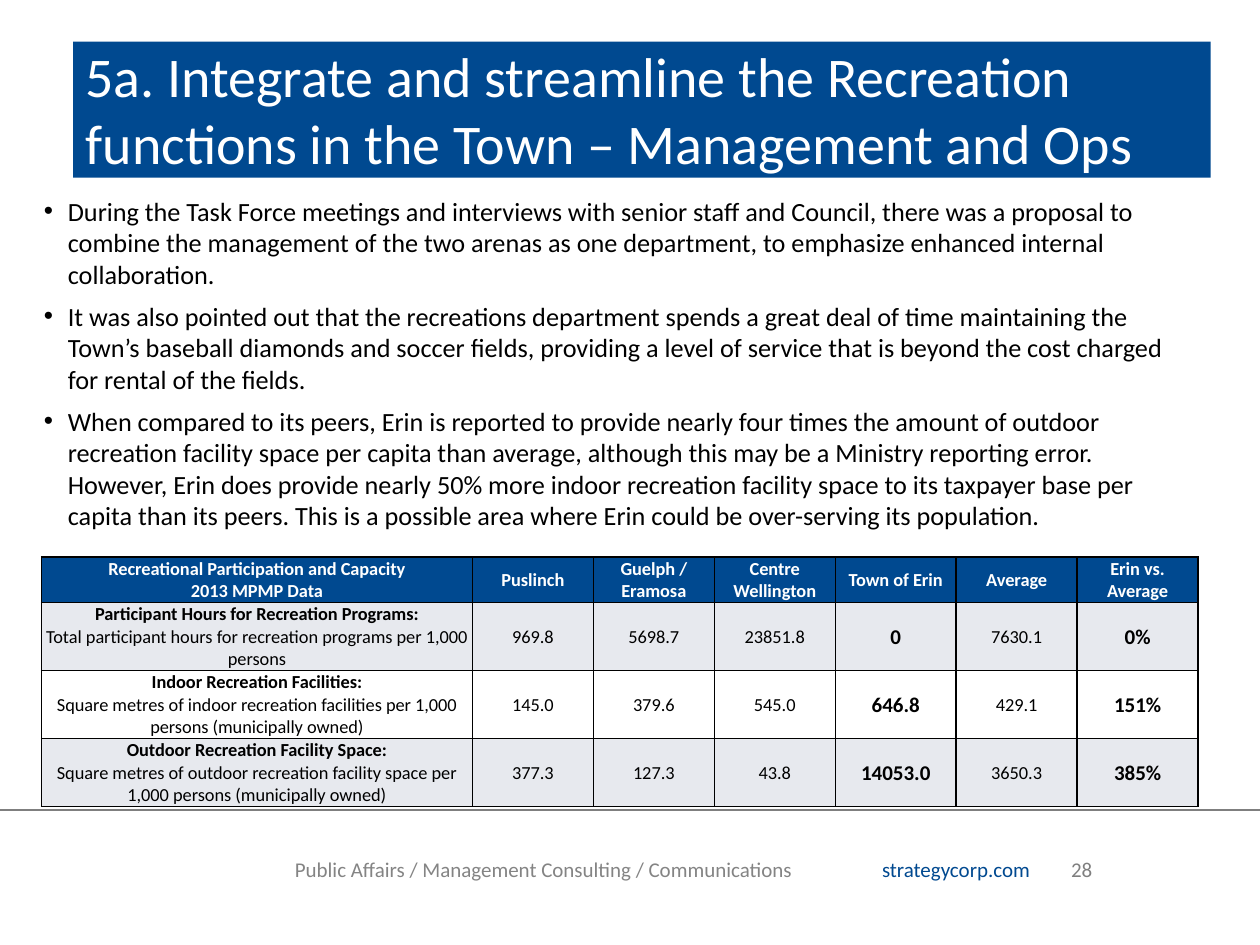
from lxml import etree
from pptx import Presentation
from pptx import util as u
from pptx.dml.color import RGBColor
from pptx.enum import shapes, text
from pptx.oxml import ns

BLUE = RGBColor(0x00, 0x49, 0x90)
WHITE = RGBColor(0xFF, 0xFF, 0xFF)
BLACK = RGBColor(0x00, 0x00, 0x00)
BAND = RGBColor(0xE7, 0xE9, 0xEE)
GREY = RGBColor(0x7F, 0x7F, 0x7F)
FOOTER_GREY = RGBColor(0x84, 0x84, 0x84)

TITLE = "5a. Integrate and streamline the Recreation functions in the Town – Management and Ops"
BULLETS = [
    "During the Task Force meetings and interviews with senior staff and Council, there was a "
    "proposal to combine the management of the two arenas as one department, to emphasize "
    "enhanced internal collaboration.",
    "It was also pointed out that the recreations department spends a great deal of time "
    "maintaining the Town’s baseball diamonds and soccer fields, providing a level of service "
    "that is beyond the cost charged for rental of the fields.",
    "When compared to its peers, Erin is reported to provide nearly four times the amount of "
    "outdoor recreation facility space per capita than average, although this may be a Ministry "
    "reporting error. However, Erin does provide nearly 50% more indoor recreation facility "
    "space to its taxpayer base per capita than its peers. This is a possible area where Erin "
    "could be over-serving its population.",
]
# A line break inside a cell starts a new paragraph
TABLE_ROWS = [
    ["Recreational Participation and Capacity\n2013 MPMP Data", "Puslinch", "Guelph / Eramosa",
     "Centre Wellington", "Town of Erin", "Average", "Erin vs. Average"],
    ["Participant Hours for Recreation Programs:\n"
     "Total participant hours for recreation programs per 1,000 persons",
     "969.8", "5698.7", "23851.8", "0", "7630.1", "0%"],
    ["Indoor Recreation Facilities:\n"
     "Square metres of indoor recreation facilities per 1,000 persons (municipally owned)",
     "145.0", "379.6", "545.0", "646.8", "429.1", "151%"],
    ["Outdoor Recreation Facility Space:\n"
     "Square metres of outdoor recreation facility space per 1,000 persons (municipally owned)",
     "377.3", "127.3", "43.8", "14053.0", "3650.3", "385%"],
]
COLUMN_WIDTHS = [3.42] + [0.96] * 6
ROW_HEIGHTS = [0.36] + [0.54] * 3
ERIN_COLUMNS = (4, 6)


class SlideBuilder:
    font_name = "Calibri"

    def __init__(self, slide):
        self.slide = slide

    def style(self, target, size, color, bold=False):
        font = target.font
        font.name, font.size, font.bold = self.font_name, u.Pt(size), bold
        font.color.rgb = color

    def indent(self, paragraph, left, first=0.0):
        properties = paragraph._p.get_or_add_pPr()
        properties.set("marL", str(u.Inches(left)))
        properties.set("indent", str(u.Inches(first)))
        return properties

    def clear_margins(self, frame):
        frame.margin_left = frame.margin_top = frame.margin_right = frame.margin_bottom = 0

    def text_box(self, left, top, width, height):
        box = self.slide.shapes.add_textbox(*map(u.Inches, (left, top, width, height)))
        box.text_frame.word_wrap = True
        return box.text_frame

    def title(self, left, top, width, height, words):
        shape = self.slide.shapes.add_shape(
            shapes.MSO_SHAPE.RECTANGLE, *map(u.Inches, (left, top, width, height)))
        shape.shadow.inherit = False
        shape.fill.solid()
        shape.fill.fore_color.rgb = BLUE
        shape.line.fill.background()
        frame = shape.text_frame
        frame.word_wrap = True
        frame.vertical_anchor = text.MSO_ANCHOR.TOP
        self.clear_margins(frame)
        paragraph = frame.paragraphs[0]
        paragraph.text = words
        paragraph.alignment = text.PP_ALIGN.LEFT
        self.indent(paragraph, 0.1)
        self.style(paragraph, 32, WHITE)

    def bullets(self, left, top, width, height, items):
        frame = self.text_box(left, top, width, height)
        for index, item in enumerate(items):
            paragraph = frame.add_paragraph() if index else frame.paragraphs[0]
            paragraph.text = item
            if index:
                paragraph.space_before = u.Pt(6)
            properties = self.indent(paragraph, 0.19, -0.19)
            etree.SubElement(properties, ns.qn("a:buFont"), typeface="Arial")
            etree.SubElement(properties, ns.qn("a:buChar"), char="•")
            self.style(paragraph, 15, BLACK)

    def footer(self, left, top, width, height, parts, tab=None):
        frame = self.text_box(left, top, width, height)
        self.clear_margins(frame)
        paragraph = frame.paragraphs[0]
        properties = self.indent(paragraph, 0.01)
        if tab:
            tabs = etree.SubElement(properties, ns.qn("a:tabLst"))
            etree.SubElement(tabs, ns.qn("a:tab"), pos=str(u.Inches(tab)), algn="l")
        for words, color in parts:
            run = paragraph.add_run()
            run.text = words
            self.style(run, 12, color)

    def rule(self, left, top, right):
        line = self.slide.shapes.add_connector(
            shapes.MSO_CONNECTOR.STRAIGHT, *map(u.Inches, (left, top, right, top)))
        line.line.color.rgb = GREY
        line.line.width = u.Pt(1)
        etree.SubElement(line._element.spPr, ns.qn("a:effectLst"))

    def border(self, cell):
        properties = cell._tc.get_or_add_tcPr()
        for index, side in enumerate(("lnL", "lnR", "lnT", "lnB")):
            line = etree.Element(ns.qn("a:" + side), w=str(u.Pt(1)))
            fill = etree.SubElement(line, ns.qn("a:solidFill"))
            etree.SubElement(fill, ns.qn("a:srgbClr"), val=str(BLACK))
            properties.insert(index, line)

    def cell(self, cell, words, fill, color, size, bold_lines):
        cell.fill.solid()
        cell.fill.fore_color.rgb = fill
        self.border(cell)
        cell.vertical_anchor = text.MSO_ANCHOR.MIDDLE
        cell.margin_left = cell.margin_right = cell.margin_top = u.Inches(0.01)
        cell.margin_bottom = 0
        cell.text_frame.text = words
        for index, paragraph in enumerate(cell.text_frame.paragraphs):
            paragraph.alignment = text.PP_ALIGN.CENTER
            self.style(paragraph, size, color, index < bold_lines)

    def table(self, left, top, rows, widths, heights):
        table = self.slide.shapes.add_table(
            len(rows), len(widths),
            *map(u.Inches, (left, top, sum(widths), sum(heights)))).table
        for column, width in zip(table.columns, widths):
            column.width = u.Inches(width)
        for row, height in zip(table.rows, heights):
            row.height = u.Inches(height)
        for r, row in enumerate(rows):
            for c, words in enumerate(row):
                cell = table.cell(r, c)
                if r == 0:
                    self.cell(cell, words, BLUE, WHITE, 10.5, bold_lines=2)
                    continue
                erin = c in ERIN_COLUMNS
                self.cell(cell, words, BAND if r % 2 else WHITE, BLACK,
                          12 if erin else 10.5, bold_lines=int(erin or c == 0))


def main():
    presentation = Presentation()
    presentation.slide_width, presentation.slide_height = u.Inches(10), u.Inches(7.5)
    builder = SlideBuilder(presentation.slides.add_slide(presentation.slide_layouts[6]))

    # Footer
    builder.footer(6.99, 6.8, 2.51, 0.2,
                   [("strategycorp.com\t", BLUE), ("28", GREY)], tab=2.2)
    builder.footer(2.33, 6.8, 4.42, 0.2,
                   [("Public Affairs / Management Consulting / Communications", FOOTER_GREY)])
    builder.rule(0, 6.43, 10)

    # Title and body
    builder.title(0.58, 0.33, 9.03, 1.08, TITLE)
    builder.bullets(0.25, 1.5, 9.25, 4.75, BULLETS)

    # Comparison table
    builder.table(0.33, 4.42, TABLE_ROWS, COLUMN_WIDTHS, ROW_HEIGHTS)

    presentation.save("out.pptx")


if __name__ == "__main__":
    main()
